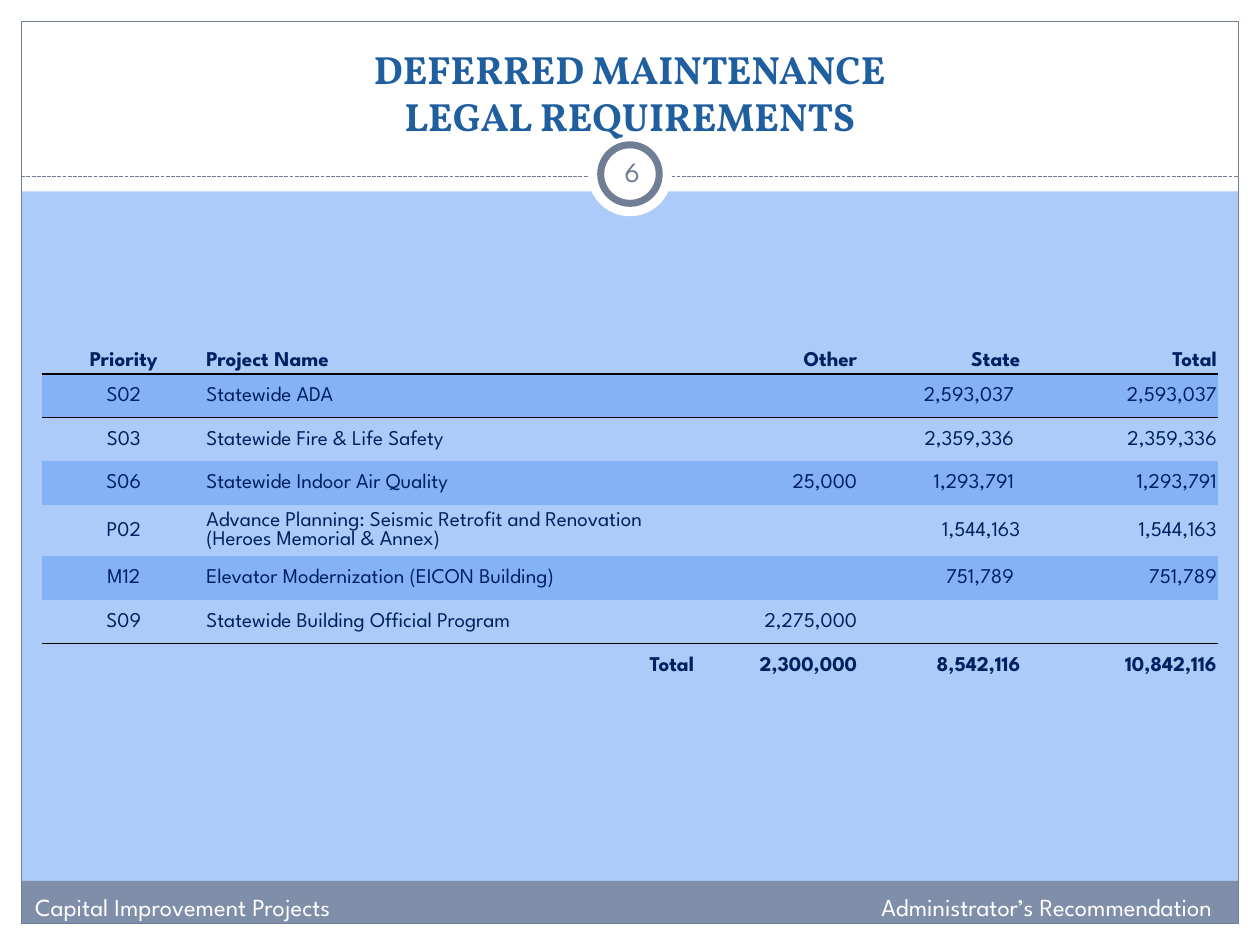
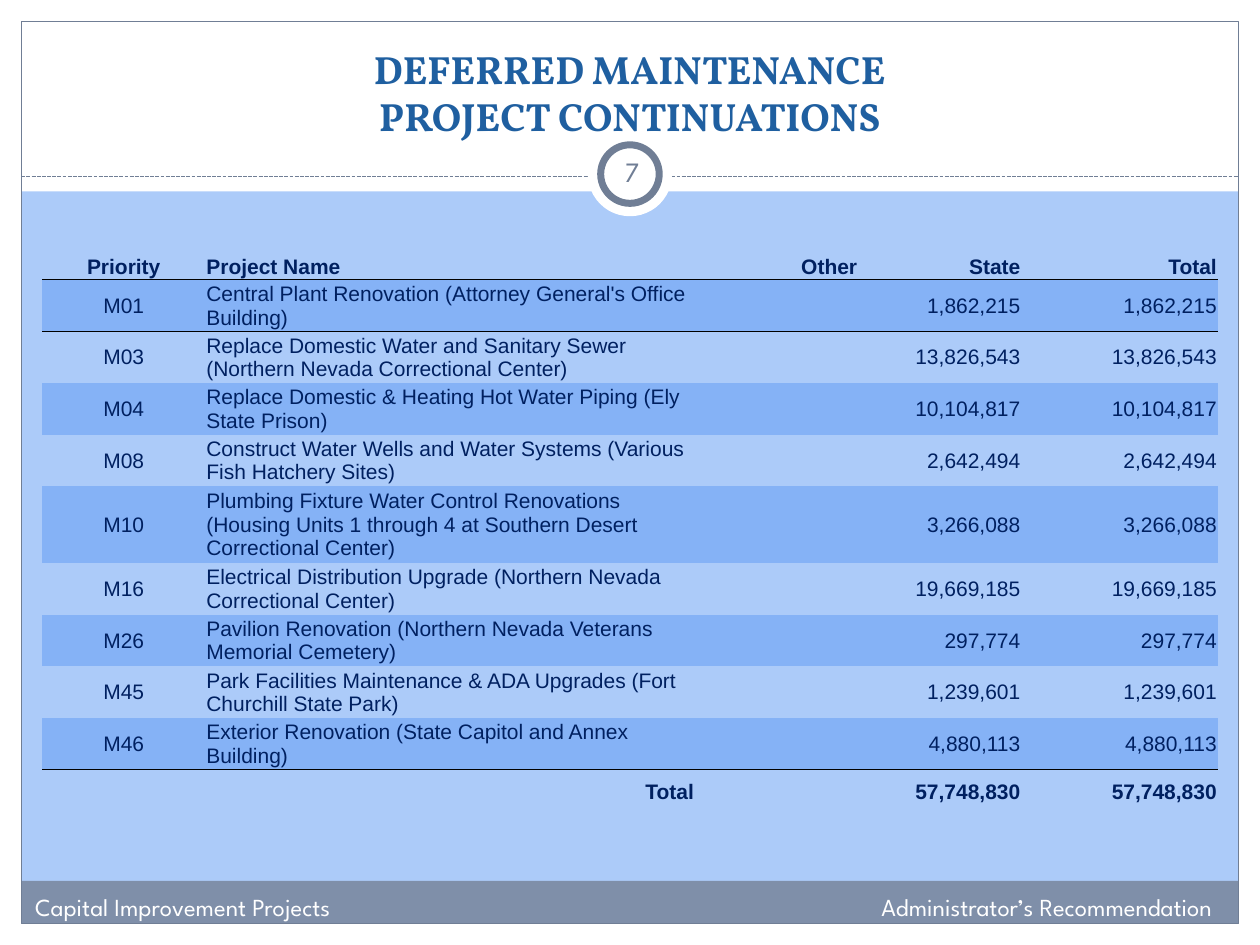
from dataclasses import dataclass

from lxml import etree
from pptx import Presentation
from pptx import util as u
from pptx.dml.color import RGBColor
from pptx.enum import dml, shapes, text
from pptx.oxml import ns

Cm, Pt = u.Cm, u.Pt
LEFT, CENTER, RIGHT = text.PP_ALIGN.LEFT, text.PP_ALIGN.CENTER, text.PP_ALIGN.RIGHT


@dataclass(frozen=True)
class Theme:
    """Colours, fonts and type sizes of the deck."""
    back: str = "ACCBF9"
    stripe: str = "85B2F6"
    white: str = "FFFFFF"
    band: str = "7F8FA9"
    line: str = "707E95"
    title: str = "1F5FA0"
    ink: str = "002060"
    rule: str = "000000"
    head_font: str = "Vollkorn"
    body_font: str = "League Spartan"
    plain_font: str = "Arial"
    title_size: float = 22.5
    title_leading: float = 26.9
    number_size: float = 16
    footer_size: float = 14
    table_size: float = 12


T = Theme()
WIDTH, HEIGHT, EDGE = 25.4, 19.05, 0.43
NO_STYLE = "{2D5ABB26-0587-4C30-8999-92F81FD0307C}"
COLUMNS = [3.29] + [1.645] * 4 + [3.29, 3.29, 3.96]
COLUMNS.insert(5, 3.29)
COLUMNS = COLUMNS[:8] + [3.96]
NAME_COL, NAME_END = 1, 5
FIELD_COLS = (0, NAME_COL, 6, 7, 8)
FIELD_ALIGNS = (CENTER, LEFT, RIGHT, RIGHT, RIGHT)
HEADINGS = ("Priority", "Project Name", "Other", "State", "Total")
HEADER_ROW, BODY_ROW, TWO_LINES, THREE_LINES = 0.46, 0.88, 1.04, 1.55
STATE_INSET = 0.15

LEGAL_ROWS = [
    ("S02", "Statewide ADA", "", "2,593,037", "2,593,037"),
    ("S03", "Statewide Fire & Life Safety", "", "2,359,336", "2,359,336"),
    ("S06", "Statewide Indoor Air Quality", "25,000", "1,293,791", "1,293,791"),
    ("P02", "Advance Planning: Seismic Retrofit and Renovation (Heroes Memorial & Annex)",
     "", "1,544,163", "1,544,163"),
    ("M12", "Elevator Modernization (EICON Building)", "", "751,789", "751,789"),
    ("S09", "Statewide Building Official Program", "2,275,000", "", ""),
]
LEGAL_TOTALS = ("2,300,000", "8,542,116", "10,842,116")
LEGAL_INSET = {"S02", "S03", "S06", "M12"}

CONTINUATIONS = [
    ("M01", "Central Plant Renovation (Attorney General's Office Building)", "1,862,215"),
    ("M03", "Replace Domestic Water and Sanitary Sewer (Northern Nevada Correctional Center)",
     "13,826,543"),
    ("M04", "Replace Domestic & Heating Hot Water Piping (Ely State Prison)", "10,104,817"),
    ("M08", "Construct Water Wells and Water Systems (Various Fish Hatchery Sites)",
     "2,642,494"),
    ("M10", "Plumbing Fixture Water Control Renovations (Housing Units 1 through 4 "
     "at Southern Desert Correctional Center)", "3,266,088"),
    ("M16", "Electrical Distribution Upgrade (Northern Nevada Correctional Center)",
     "19,669,185"),
    ("M26", "Pavilion Renovation (Northern Nevada Veterans Memorial Cemetery)", "297,774"),
    ("M45", "Park Facilities Maintenance & ADA Upgrades (Fort Churchill State Park)",
     "1,239,601"),
    ("M46", "Exterior Renovation (State Capitol and Annex Building)", "4,880,113"),
]
CONTINUATION_ROWS = [(code, name, "", cost, cost) for code, name, cost in CONTINUATIONS]
CONTINUATION_TOTALS = ("", "57,748,830", "57,748,830")


def rgb(color):
    """Turn a hex string into a colour."""
    return RGBColor.from_string(color)


def assign(obj, **values):
    """Set each given attribute on an object."""
    for name, value in values.items():
        setattr(obj, name, value)


def write(tf, words, align, color, **font):
    """Write one formatted paragraph into a text frame."""
    p = tf.paragraphs[0]
    p.text, p.alignment = words, align
    for r in p.runs:
        assign(r.font, **font)
        r.font.color.rgb = rgb(color)
    return p


def add_shape(slide, kind, box, fill=None, line=None, weight=0.75):
    """Add a flat preset shape in a box of centimetres."""
    sp = slide.shapes.add_shape(kind, *map(Cm, box))
    sp.shadow.inherit = False
    if fill:
        sp.fill.solid()
        sp.fill.fore_color.rgb = rgb(fill)
    else:
        sp.fill.background()
    if line:
        sp.line.color.rgb = rgb(line)
        sp.line.width = Pt(weight)
    else:
        sp.line.fill.background()
    return sp


def add_text(slide, box, words, align, color, frame=None, **font):
    """Add a wrapping text box and return its paragraph."""
    tf = slide.shapes.add_textbox(*map(Cm, box)).text_frame
    assign(tf, word_wrap=True, **(frame or {}))
    return write(tf, words, align, color, **font)


def add_frame(slide, box):
    """Draw the white margins, the footer band, the outline and the dashed line."""
    x, y, w, h = box
    rect = shapes.MSO_SHAPE.RECTANGLE
    for margin in ((x, y + h - EDGE, w, EDGE), (x, y, w, 3.86),
                   (x, y, EDGE, h), (x + w - EDGE, y, EDGE, h)):
        add_shape(slide, rect, margin, T.white)
    inner = w - 2 * EDGE
    add_shape(slide, rect, (x + EDGE, y + h - 1.29, inner, 0.86), T.band)
    add_shape(slide, rect, (x + EDGE, y + EDGE, inner, h - 2 * EDGE), line=T.line)
    ends = (x + EDGE, y + 3.56, x + w - EDGE, y + 3.56)
    dashes = slide.shapes.add_connector(shapes.MSO_CONNECTOR.STRAIGHT, *map(Cm, ends))
    assign(dashes.line, width=Pt(0.75), dash_style=dml.MSO_LINE.SQUARE_DOT)
    dashes.line.color.rgb = rgb(T.line)
    etree.SubElement(dashes.element.spPr, ns.qn("a:effectLst"))


def add_badge(slide, box, number):
    """Draw the ringed slide number."""
    x, y, w, h = box
    oval = shapes.MSO_SHAPE.OVAL
    add_shape(slide, oval, box, T.white)
    add_shape(slide, oval, (x + 0.26, y + 0.26, w - 0.52, h - 0.52), T.white, T.line, 4)
    sides = ("margin_left", "margin_right", "margin_top", "margin_bottom")
    frame = dict.fromkeys(sides, Cm(0.13))
    frame["vertical_anchor"] = text.MSO_ANCHOR.MIDDLE
    add_text(slide, (x + 0.26, y + 0.18, 1.27, 1.22), str(number), CENTER, T.line, frame,
             name=T.body_font, size=Pt(T.number_size))


def add_title(slide, box, words):
    """Write the two-line title."""
    p = add_text(slide, box, words, CENTER, T.title,
                 dict(margin_top=Cm(0.28), margin_bottom=0),
                 name=T.head_font, size=Pt(T.title_size), bold=True)
    p.line_spacing = Pt(T.title_leading)


def add_footers(slide, box):
    """Write the left and right footer texts."""
    x, y, w, h = box
    half = w / 2
    for left, words, align in ((x, "Capital Improvement Projects", LEFT),
                               (x + half, "Administrator’s Recommendation", RIGHT)):
        add_text(slide, (left, y, half, h), words, align, T.white,
                 name=T.body_font, size=Pt(T.footer_size))


def add_rule(cell, side):
    """Draw a border on the top (lnT) or bottom (lnB) of a cell."""
    tag = ns.qn("a:" + side)
    ln = etree.Element(tag, w=str(Pt(1)))
    fill = etree.SubElement(ln, ns.qn("a:solidFill"))
    etree.SubElement(fill, ns.qn("a:srgbClr"), val=T.rule)
    cell._tc.get_or_add_tcPr().insert(0, ln)


def fill_row(table, index, fields, font, bold, inset):
    """Write one project row and merge its name cells."""
    table.cell(index, NAME_COL).merge(table.cell(index, NAME_END))
    for col, words, align in zip(FIELD_COLS, fields, FIELD_ALIGNS):
        cell = table.cell(index, col)
        write(cell.text_frame, words, align, T.ink,
              name=font, size=Pt(T.table_size), bold=bold)
        if col == 7 and fields[0] in inset:
            cell.margin_right = Cm(STATE_INSET)


def add_project_table(slide, origin, rows, totals, heights, font, inset=()):
    """Add the striped project table with its header and total rows."""
    x, y = origin
    count = len(heights)
    size = (sum(COLUMNS), sum(heights))
    gf = slide.shapes.add_table(count, len(COLUMNS), *map(Cm, (x, y, *size)))
    table = gf.table
    assign(table, first_row=False, horz_banding=False)
    next(gf.element.iter(ns.qn("a:tableStyleId"))).text = NO_STYLE
    for column, width in zip(table.columns, COLUMNS):
        column.width = Cm(width)
    for i, height in enumerate(heights):
        table.rows[i].height = Cm(height)
        for cell in table.rows[i].cells:
            assign(cell, margin_left=Cm(0.02), margin_right=Cm(0.02), margin_top=Cm(0.02),
                   margin_bottom=0, vertical_anchor=text.MSO_ANCHOR.MIDDLE)
            if i % 2 and i < count - 1:
                cell.fill.solid()
                cell.fill.fore_color.rgb = rgb(T.stripe)
            else:
                cell.fill.background()
            if i in (0, count - 2):
                add_rule(cell, "lnB")
            if i in (1, count - 1):
                add_rule(cell, "lnT")
    for i, fields in enumerate([HEADINGS, *rows]):
        fill_row(table, i, fields, font, i == 0, inset)
    for col, words in zip(range(NAME_END, len(COLUMNS)), ("Total", *totals)):
        write(table.cell(count - 1, col).text_frame, words, RIGHT, T.ink,
              name=font, size=Pt(T.table_size), bold=True)


def add_project_slide(prs, number, title, **table):
    """Add one project slide with the shared frame, title and footers."""
    slide = prs.slides.add_slide(prs.slide_layouts[6])
    slide.background.fill.solid()
    slide.background.fill.fore_color.rgb = rgb(T.back)
    add_frame(slide, (0, 0, WIDTH, HEIGHT))
    add_badge(slide, (11.85, 2.66, 1.7, 1.7), number)
    add_title(slide, (0.85, 0.64, 23.7, 2.11), title)
    add_project_table(slide, **table)
    add_footers(slide, (0.46, 17.86, 24.23, 0.86))


def main():
    """Build and save the deck."""
    prs = Presentation()
    assign(prs, slide_width=Cm(WIDTH), slide_height=Cm(HEIGHT))
    add_project_slide(
        prs, 6, "DEFERRED MAINTENANCE\nLEGAL REQUIREMENTS", origin=(0.85, 7.01),
        rows=LEGAL_ROWS, totals=LEGAL_TOTALS, font=T.body_font, inset=LEGAL_INSET,
        heights=[HEADER_ROW] + [BODY_ROW] * 7)
    add_project_slide(
        prs, 7, "DEFERRED MAINTENANCE\nPROJECT CONTINUATIONS", origin=(0.85, 5.11),
        rows=CONTINUATION_ROWS, totals=CONTINUATION_TOTALS, font=T.plain_font,
        heights=[HEADER_ROW] + [TWO_LINES] * 4 + [THREE_LINES] + [TWO_LINES] * 4 + [BODY_ROW])
    prs.save("out.pptx")


if __name__ == "__main__":
    main()
